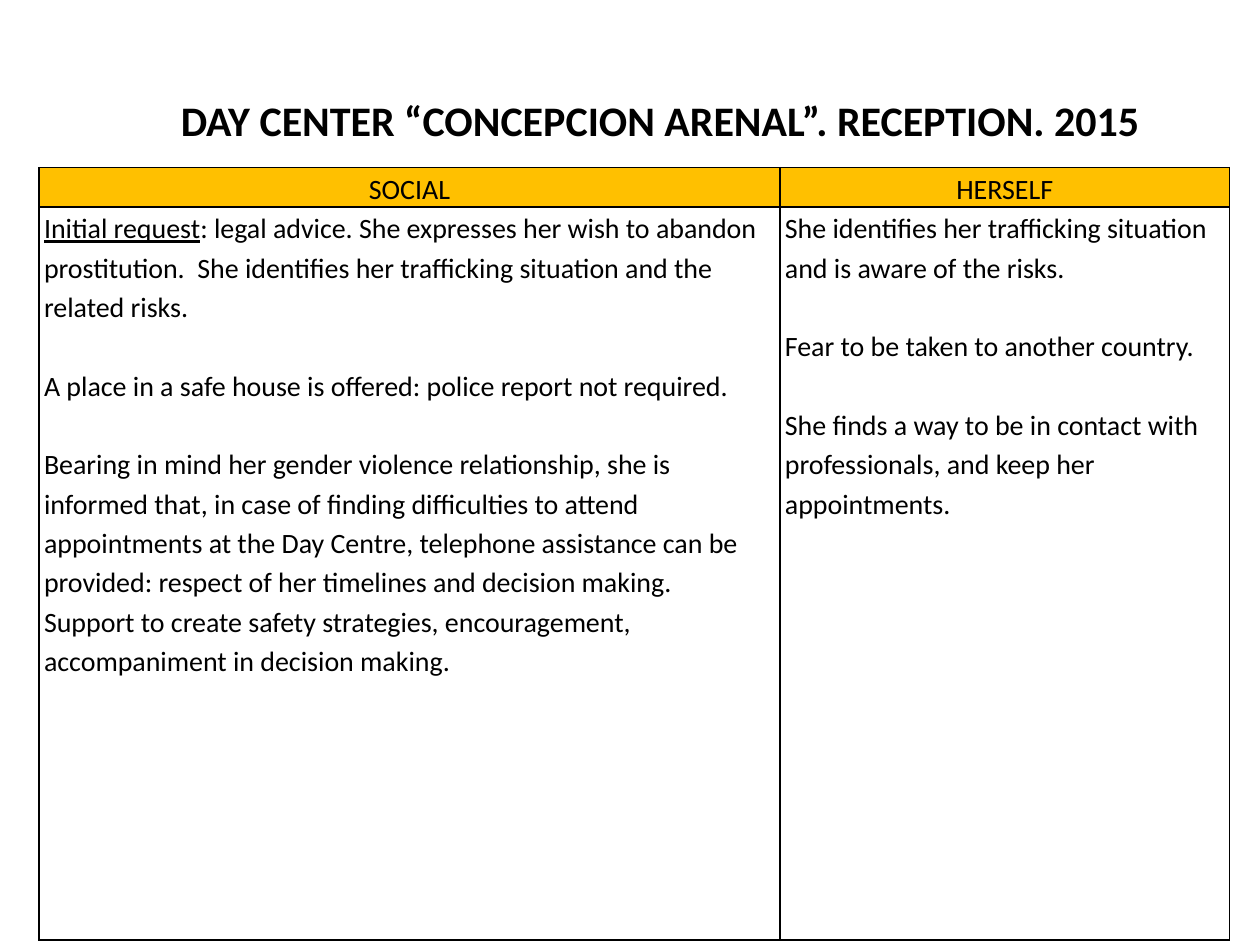
from dataclasses import dataclass

import lxml.etree
import pptx
import pptx.dml.color
import pptx.enum.text
import pptx.oxml.ns
import pptx.util

Inches = pptx.util.Inches
Pt = pptx.util.Pt
RGBColor = pptx.dml.color.RGBColor
CENTER = pptx.enum.text.PP_ALIGN.CENTER
LEFT = pptx.enum.text.PP_ALIGN.LEFT


@dataclass(frozen=True)
class Theme:
    font: str = "Calibri"
    ink: str = "000000"
    header_fill: str = "FFC000"
    title_size: float = 24
    table_size: float = 16
    line_spacing: float = 1.15
    entry_gap: float = 22.5
    border_width: float = 1


@dataclass(frozen=True)
class Entry:
    text: str
    lead: str = ""
    gap_before: bool = True


@dataclass(frozen=True)
class Column:
    heading: str
    width: float
    entries: tuple[Entry, ...]


THEME = Theme()
HEADER_HEIGHT = 0.31
BODY_HEIGHT = 5.82
COLUMNS = (
    Column("SOCIAL", 5.88, (
        Entry(": legal advice. She expresses her wish to abandon prostitution. "
              " She identifies her trafficking situation and the related risks.",
              lead="Initial request", gap_before=False),
        Entry("A place in a safe house is offered: police report not required."),
        Entry("Bearing in mind her gender violence relationship, she is informed that, "
              "in case of finding difficulties to attend appointments at the Day Centre, "
              "telephone assistance can be provided: respect of her timelines and "
              "decision making."),
        Entry("Support to create safety strategies, encouragement, accompaniment in "
              "decision making.", gap_before=False),
    )),
    Column("HERSELF", 3.57, (
        Entry("She identifies her trafficking situation and is aware of the risks.",
              gap_before=False),
        Entry("Fear to be taken to another country."),
        Entry("She finds a way to be in contact with professionals, and keep her "
              "appointments."),
    )),
)


def style_run(run, size: float, bold: bool = False) -> None:
    run.font.name = THEME.font
    run.font.size = Pt(size)
    run.font.bold = bold
    run.font.color.rgb = RGBColor.from_string(THEME.ink)


def add_borders(cell) -> None:
    properties = cell._tc.get_or_add_tcPr()
    for side in ("a:lnL", "a:lnR", "a:lnT", "a:lnB"):
        border = lxml.etree.SubElement(properties, pptx.oxml.ns.qn(side),
                                       w=str(Pt(THEME.border_width)))
        fill = lxml.etree.SubElement(border, pptx.oxml.ns.qn("a:solidFill"))
        lxml.etree.SubElement(fill, pptx.oxml.ns.qn("a:srgbClr"), val=THEME.ink)


def fill_cell(cell, entries: tuple[Entry, ...], alignment, side_margin: float) -> None:
    cell.margin_left = cell.margin_right = Inches(side_margin)
    cell.margin_top = cell.margin_bottom = 0
    add_borders(cell)
    for index, entry in enumerate(entries):
        paragraph = cell.text_frame.add_paragraph() if index else cell.text_frame.paragraphs[0]
        paragraph.alignment = alignment
        paragraph.line_spacing = THEME.line_spacing
        paragraph.space_before = Pt(THEME.entry_gap if entry.gap_before else 0)
        if entry.lead:
            paragraph.text = entry.lead
            paragraph.runs[0].font.underline = True
            paragraph.add_run().text = entry.text
        else:
            paragraph.text = entry.text
        for run in paragraph.runs:
            style_run(run, THEME.table_size)


def set_title(slide) -> None:
    title = slide.shapes.title
    title.left, title.top = Inches(1.02), Inches(0.7)
    title.width, title.height = Inches(8.44), Inches(0.5)
    title.text_frame.text = "DAY CENTER “CONCEPCION ARENAL”. RECEPTION. 2015"
    heading = title.text_frame.paragraphs[0]
    heading.alignment = CENTER
    style_run(heading.runs[0], THEME.title_size, bold=True)


def add_reception_table(slide) -> None:
    table = slide.shapes.add_table(
        2, len(COLUMNS), Inches(0.31), Inches(1.33),
        Inches(sum(column.width for column in COLUMNS)),
        Inches(HEADER_HEIGHT + BODY_HEIGHT)).table
    table.horz_banding = False
    table.rows[0].height = Inches(HEADER_HEIGHT)
    table.rows[1].height = Inches(BODY_HEIGHT)
    for index, column in enumerate(COLUMNS):
        table.columns[index].width = Inches(column.width)
        header, body = table.cell(0, index), table.cell(1, index)
        fill_cell(header, (Entry(column.heading, gap_before=False),), CENTER, 0.02)
        header.fill.solid()
        header.fill.fore_color.rgb = RGBColor.from_string(THEME.header_fill)
        fill_cell(body, column.entries, LEFT, 0.04)
        body.fill.background()


def main() -> None:
    presentation = pptx.Presentation()
    presentation.slide_width, presentation.slide_height = Inches(10), Inches(7.5)
    slide = presentation.slides.add_slide(presentation.slide_layouts[5])
    set_title(slide)
    add_reception_table(slide)
    presentation.save("out.pptx")


if __name__ == "__main__":
    main()
